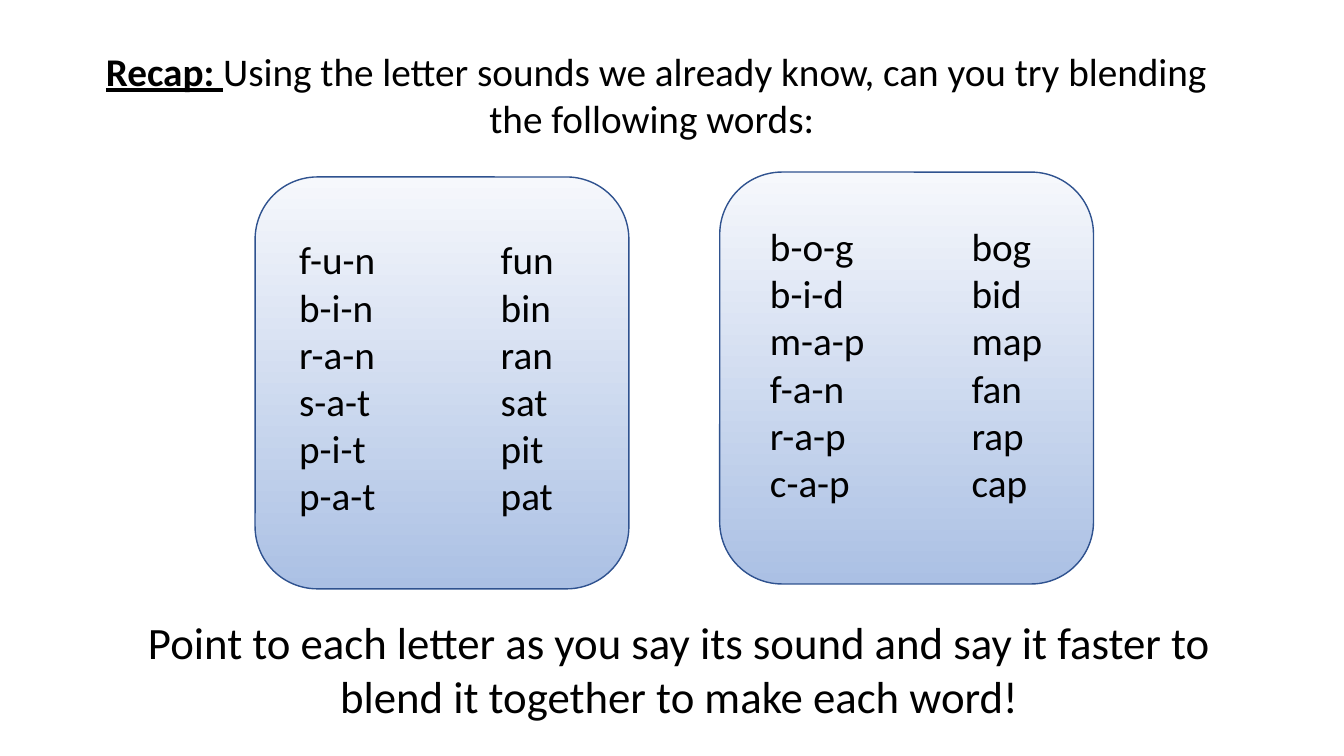
from lxml import etree
from pptx import Presentation
from pptx.dml.color import RGBColor
from pptx.enum.shapes import MSO_SHAPE as Shape
from pptx.enum.text import MSO_AUTO_SIZE as AutoSize, PP_ALIGN as Align
from pptx.oxml.ns import qn
from pptx.util import Pt

# Content: runs are (text, emphasised)
HEADING = [
    ("Recap: ", True),
    ("Using the letter sounds we already know, can you try blending the following words: ", False),
]
INSTRUCTION = [
    ("Point to each letter as you say its sound and say it faster to "
     "blend it together to make each word!", False),
]
# Each card: words, card position, word list position and width
CARDS = [
    (["fun", "bin", "ran", "sat", "pit", "pat"], (182.2, 126.4), (206.6, 164.9), 267),
    (["bog", "bid", "map", "fan", "rap", "cap"], (514.1, 122.9), (542.9, 155.5), 317.5),
]

COLORS = {"text": "000000", "top": "F6F8FC", "bottom": "ABC0E4", "border": "2F528F"}
FONT = "Calibri"
CARD_WIDTH, CARD_HEIGHT = 267, 294.2
WORD_TAB = 144
BANNER_WIDTH = 829.4


def color(name):
    return RGBColor.from_string(COLORS[name])


def add_text(slide, left, top, width, height, paragraphs, size, align=Align.LEFT, tab=None):
    shape = slide.shapes.add_textbox(Pt(left), Pt(top), Pt(width), Pt(height))
    frame = shape.text_frame
    frame.word_wrap = True
    frame.auto_size = AutoSize.SHAPE_TO_FIT_TEXT
    for index, runs in enumerate(paragraphs):
        paragraph = frame.add_paragraph() if index else frame.paragraphs[0]
        paragraph.alignment = align
        if tab:
            tabs = etree.SubElement(paragraph._p.get_or_add_pPr(), qn("a:tabLst"))
            etree.SubElement(tabs, qn("a:tab"), pos=str(Pt(tab)), algn="l")
        for text, emphasised in runs:
            run = paragraph.add_run()
            run.text = text
            run.font.name = FONT
            run.font.size = Pt(size)
            run.font.bold = run.font.underline = emphasised
            run.font.color.rgb = color("text")


def add_card(slide, left, top):
    shape = slide.shapes.add_shape(
        Shape.ROUNDED_RECTANGLE, Pt(left), Pt(top), Pt(CARD_WIDTH), Pt(CARD_HEIGHT))
    shape.shadow.inherit = False
    shape.fill.gradient()
    shape.fill.gradient_angle = 270
    for stop, name, position in zip(shape.fill.gradient_stops, ("top", "bottom"), (0, 1)):
        stop.color.rgb = color(name)
        stop.position = position
    shape.line.color.rgb = color("border")
    shape.line.width = Pt(1)


def main():
    presentation = Presentation()
    presentation.slide_width, presentation.slide_height = Pt(960), Pt(540)
    slide = presentation.slides.add_slide(presentation.slide_layouts[6])

    # Heading
    add_text(slide, 54, 30.2, BANNER_WIDTH, 74.9, [HEADING], 28, Align.CENTER)

    # Cards with each word sounded out, then whole
    for words, card_at, list_at, list_width in CARDS:
        add_card(slide, *card_at)
        rows = [[("-".join(word) + "\t" + word, False)] for word in words]
        add_text(slide, *list_at, list_width, 211, rows, 28, tab=WORD_TAB)

    # Instruction
    add_text(slide, 70.6, 435.6, BANNER_WIDTH, 85, [INSTRUCTION], 32, Align.CENTER)

    presentation.save("out.pptx")


if __name__ == "__main__":
    main()
